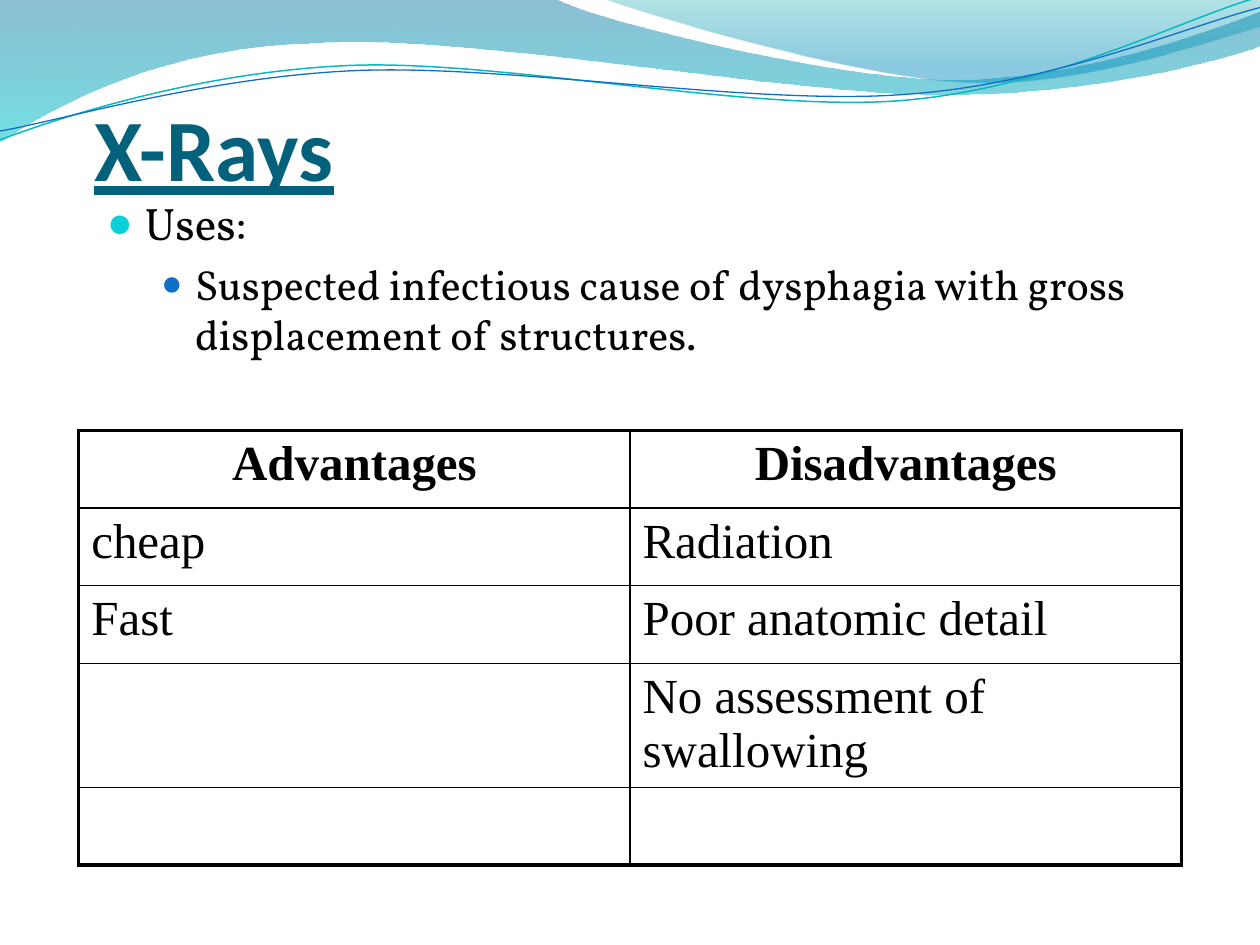
from math import cos, radians, sin

from lxml.etree import SubElement
from pptx import Presentation
from pptx.dml.color import RGBColor
from pptx.enum.text import MSO_ANCHOR, PP_ALIGN
from pptx.oxml.ns import qn
from pptx.util import Inches, Pt

WIDTH, HEIGHT = Inches(10), Inches(7.5)
TILT = 357.3
WAVE_CENTER = (4.99, 0.58)

# Bands: a closed outline and its gradient stops (position, colour, opacity).
# A point list of two is a straight line, of six a Bezier curve.
BANDS = [
    ((0, 0), [(4.4, -0.01), (4.76, 0.17, 6.64, 0.63, 7.58, 0.63),
              (8.53, 0.63, 9.58, 0.26, 10, 0.09), (10.01, 0.36),
              (9.83, 0.44, 8.7, 0.76, 7.46, 0.75),
              (6.22, 0.75, 3.82, 0.28, 2.57, 0.34),
              (1.29, 0.36, 0.46, 0.83, -0.01, 1.13), (0, 0)],
     [(0, "0074A1", 45), (100, "00C6CF", 55)]),
    ((4.79, -0.01), [(5.09, 0.11, 6.82, 0.62, 7.69, 0.65),
                     (8.56, 0.69, 9.61, 0.32, 10, 0.21), (10, 0),
                     (4.79, -0.01)],
     [(0, "00A1A9", 30), (80, "008BBF", 45)]),
]
# Waves: an open curve as it lies after tilting, its colour and its width
WAVES = [
    ((0, 1.11), [(0.48, 0.93, 1.58, 0.57, 2.77, 0.52),
                 (3.95, 0.47, 5.93, 0.89, 7.13, 0.8),
                 (8.33, 0.71, 9.38, 0.15, 9.98, -0.02)], "0AB8BF", 0.85),
    ((0, 1.04), [(0.47, 0.96, 1.64, 0.61, 2.83, 0.56),
                 (4.03, 0.51, 5.97, 0.84, 7.17, 0.75),
                 (8.36, 0.67, 9.41, 0.21, 10, 0.06)], "0F6FC6", 0.75),
]
ROWS = [("Advantages", "Disadvantages"), ("cheap", "Radiation"),
        ("Fast", "Poor anatomic detail"), ("", "No assessment of swallowing"),
        ("", "")]


def color(value):
    return RGBColor.from_string(value)


def place(box):
    """Turn shares of the slide into lengths."""
    left, top, width, height = box
    return (round(left * WIDTH), round(top * HEIGHT),
            round(width * WIDTH), round(height * HEIGHT))


def add_node(parent, tag, **attributes):
    node = SubElement(parent, qn(tag))
    for name, value in attributes.items():
        node.set(name, str(value))
    return node


def write(para, text, size, font, ink="000000", bold=False, underline=False,
          align=None, space=0, bullet=None):
    """Bullet is (colour, size in percent, indent, hanging)."""
    span = para.add_run()
    span.text = text
    span.font.size, span.font.name = Pt(size), font
    span.font.bold, span.font.underline = bold, underline
    span.font.color.rgb = color(ink)
    if align is not None:
        para.alignment = align
    properties = para._p.get_or_add_pPr()
    if space:
        add_node(add_node(properties, "a:spcBef"), "a:spcPct", val=space * 1000)
    if bullet:
        tint, share, indent, hanging = bullet
        properties.set("marL", str(Inches(indent)))
        properties.set("indent", str(-Inches(hanging)))
        add_node(add_node(properties, "a:buClr"), "a:srgbClr", val=tint)
        add_node(properties, "a:buSzPct", val=share * 1000)
        add_node(properties, "a:buFont", typeface="Times New Roman")
        add_node(properties, "a:buChar", char="●")


def untilt(point):
    """Turn a point back so that the tilted shape lands on it."""
    angle = radians(360 - TILT)
    dx, dy = (value - middle for value, middle in zip(point, WAVE_CENTER))
    return (WAVE_CENTER[0] + dx * cos(angle) - dy * sin(angle),
            WAVE_CENTER[1] + dx * sin(angle) + dy * cos(angle))


def add_outline(page, start, pieces, close=False, turn=lambda point: point):
    groups = [[tuple(Inches(value) for value in turn(piece[i:i + 2]))
               for i in range(0, len(piece), 2)] for piece in [start] + pieces]
    builder = page.shapes.build_freeform(*groups[0][0], scale=1.0)
    builder.add_line_segments([group[-1] for group in groups[1:]], close=close)
    shape = builder.convert_to_shape()
    shape.shadow.inherit = False
    # Bend the segments that have control points
    segments = list(shape._element.iter(qn("a:lnTo")))
    for segment, group in zip(segments, groups[1:]):
        if len(group) == 3:
            curve = segment.getparent().makeelement(qn("a:cubicBezTo"))
            for x, y in group:
                add_node(curve, "a:pt", x=x - shape.left, y=y - shape.top)
            segment.getparent().replace(segment, curve)
    return shape


def add_header_waves(page):
    for start, pieces, stops in BANDS:
        band = add_outline(page, start, pieces, close=True)
        band.line.fill.background()
        band.fill.gradient()
        gradient = band._element.spPr.find(qn("a:gradFill"))
        for child in list(gradient):
            gradient.remove(child)
        stop_list = add_node(gradient, "a:gsLst")
        for position, tint, opacity in stops:
            stop = add_node(stop_list, "a:gs", pos=position * 1000)
            add_node(add_node(stop, "a:srgbClr", val=tint), "a:alpha",
                     val=opacity * 1000)
        add_node(gradient, "a:lin", ang=90 * 60000, scaled=0)
    for start, pieces, tint, width in WAVES:
        wave = add_outline(page, start, pieces, turn=untilt)
        wave.rotation = TILT
        wave.fill.background()
        wave.line.color.rgb = color(tint)
        wave.line.width = Pt(width)


def add_title(page, box):
    frame = page.shapes.add_textbox(*place(box)).text_frame
    frame.word_wrap = True
    frame.vertical_anchor = MSO_ANCHOR.BOTTOM
    frame.margin_left = frame.margin_right = frame.margin_bottom = 0
    write(frame.paragraphs[0], "X-Rays", 50, "Calibri", ink="04617B",
          bold=True, underline=True)


def add_uses(page, box):
    frame = page.shapes.add_textbox(*place(box)).text_frame
    frame.word_wrap = True
    write(frame.paragraphs[0], "Uses:", 26, "Vollkorn", space=20,
          bullet=("0BD0D9", 95, 0.3, 0.3))
    detail = frame.add_paragraph()
    detail.level = 1
    write(detail, "Suspected infectious cause of dysphagia with gross "
          "displacement of structures.", 24, "Vollkorn", space=20,
          bullet=("0F6FC6", 85, 0.7, 0.27))


def add_borders(cell, outer):
    """Draw the sides named in outer thick and the others thin."""
    properties = cell._tc.get_or_add_tcPr()
    for side in "LRTB":
        width = Pt(2.25 if side in outer else 1)
        line = add_node(properties, f"a:ln{side}", w=width)
        add_node(add_node(line, "a:solidFill"), "a:srgbClr", val="000000")


def add_comparison(page, box):
    last_row, last_column = len(ROWS) - 1, len(ROWS[0]) - 1
    table = page.shapes.add_table(len(ROWS), len(ROWS[0]), *place(box)).table
    table.first_row = table.horz_banding = False
    for r, texts in enumerate(ROWS):
        for c, text in enumerate(texts):
            cell = table.cell(r, c)
            edges = {"L": c == 0, "R": c == last_column,
                     "T": r == 0, "B": r == last_row}
            add_borders(cell, [side for side in edges if edges[side]])
            cell.fill.background()
            cell.margin_bottom = 0
            if text:
                write(cell.text_frame.paragraphs[0], text, 28, "Times New Roman",
                      bold=r == 0, space=20,
                      align=PP_ALIGN.CENTER if r == 0 else PP_ALIGN.LEFT)


def main():
    deck = Presentation()
    deck.slide_width, deck.slide_height = WIDTH, HEIGHT
    page = deck.slides.add_slide(deck.slide_layouts[6])
    add_header_waves(page)
    add_title(page, (0.075, 0.044, 0.85, 0.167))
    add_uses(page, (0.075, 0.2, 0.85, 0.26))
    add_comparison(page, (0.0625, 0.4555, 0.875, 0.411))
    deck.save("out.pptx")


if __name__ == "__main__":
    main()
